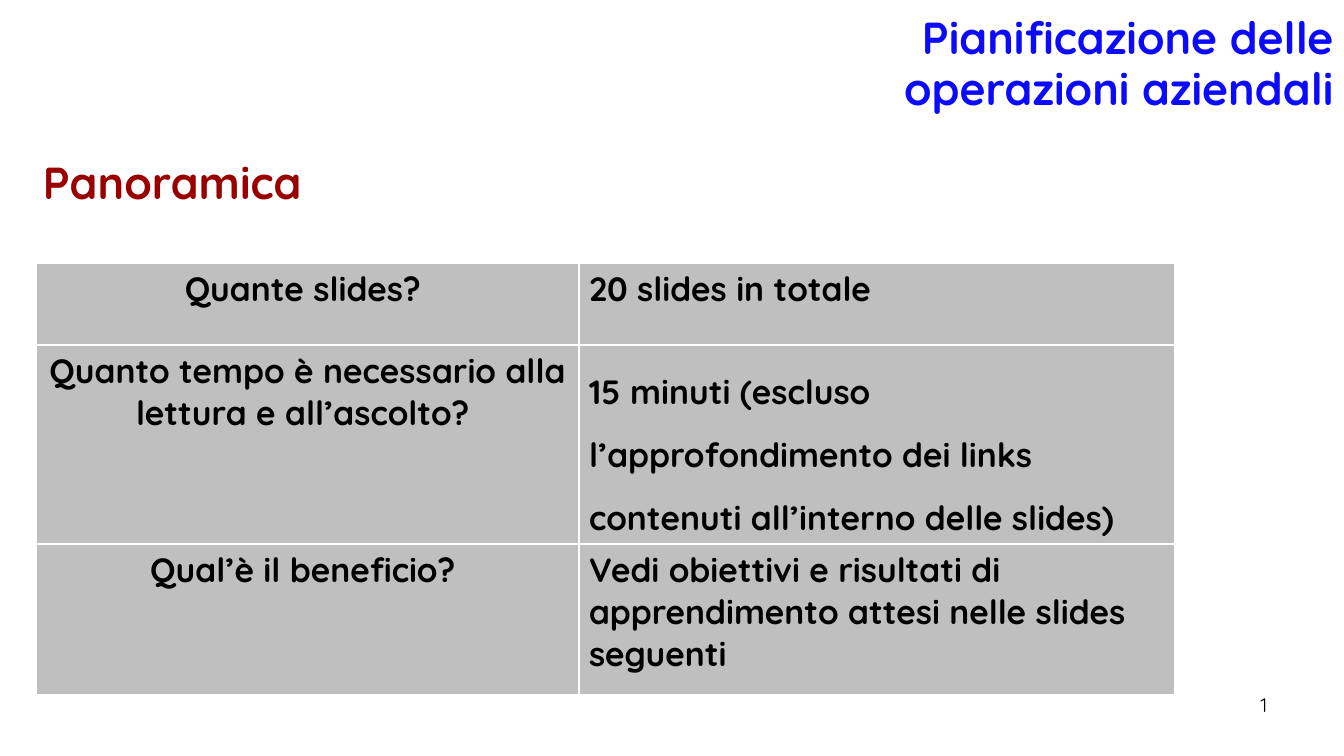
from lxml.etree import SubElement
from pptx import Presentation
from pptx.dml.color import RGBColor
from pptx.enum.text import MSO_ANCHOR, PP_ALIGN
from pptx.oxml import parse_xml
from pptx.oxml.ns import nsdecls, qn
from pptx.util import Pt

EMU_PER_PX = 914400 / 100.8
FONT = "Quicksand"
BLACK, WHITE, GREY = "000000", "FFFFFF", "BFBFBF"
BLUE, RED = "0B0AFD", "990000"


def px(length):
    return round(length * EMU_PER_PX)


def colour(hex_string):
    return RGBColor.from_string(hex_string)


class SlideBuilder:
    def __init__(self, presentation):
        self.slide = presentation.slides.add_slide(presentation.slide_layouts[5])

    def style(self, paragraph, size, ink, bold=True, align=PP_ALIGN.LEFT, spacing=1.0):
        paragraph.alignment = align
        paragraph.line_spacing = spacing
        font = paragraph.font
        font.name, font.size, font.bold = FONT, Pt(size), bold
        font.color.rgb = colour(ink)

    def title(self, text, left, top, width, height):
        heading = self.slide.shapes.title
        heading.left, heading.top = px(left), px(top)
        heading.width, heading.height = px(width), px(height)
        frame = heading.text_frame
        frame.text = text
        frame.word_wrap = True
        frame.vertical_anchor = MSO_ANCHOR.BOTTOM
        self.style(frame.paragraphs[0], 32, BLUE, align=PP_ALIGN.RIGHT, spacing=0.95)

    def text(self, text, left, top, width, height, size, ink, **style):
        box = self.slide.shapes.add_textbox(px(left), px(top), px(width), px(height))
        box.text_frame.word_wrap = True
        paragraph = box.text_frame.paragraphs[0]
        paragraph.text = text
        self.style(paragraph, size, ink, **style)
        return paragraph

    def slide_number(self, number, left, top, width, height):
        paragraph = self.text("", left, top, width, height, 14, BLACK,
                              bold=False, align=PP_ALIGN.RIGHT)
        field = parse_xml(
            f'<a:fld {nsdecls("a")} id="{{B6F15528-21DE-4FAA-801E-634DDDAF4B2B}}" '
            f'type="slidenum"><a:rPr lang="it-IT"/><a:t>{number}</a:t></a:fld>')
        paragraph._p.append(field)

    def borders(self, cell):
        properties = cell._tc.get_or_add_tcPr()
        for side in ("a:lnL", "a:lnR", "a:lnT", "a:lnB"):
            line = SubElement(properties, qn(side), w=str(Pt(1)))
            fill = SubElement(line, qn("a:solidFill"))
            SubElement(fill, qn("a:srgbClr"), val=WHITE)

    def table(self, rows, left, top, widths, heights):
        table = self.slide.shapes.add_table(
            len(heights), len(widths), px(left), px(top),
            px(sum(widths)), px(sum(heights))).table
        for column, width in zip(table.columns, widths):
            column.width = px(width)
        for row, height, (question, answer, spacing) in zip(table.rows, heights, rows):
            row.height = px(height)
            contents = ((question, PP_ALIGN.CENTER, 1.0), (answer, PP_ALIGN.LEFT, spacing))
            for cell, (text, align, line_spacing) in zip(row.cells, contents):
                cell.text = text
                self.borders(cell)
                cell.fill.solid()
                cell.fill.fore_color.rgb = colour(GREY)
                self.style(cell.text_frame.paragraphs[0], 24, BLACK,
                           align=align, spacing=line_spacing)


def main():
    presentation = Presentation()
    presentation.slide_width, presentation.slide_height = px(1344), px(756)
    builder = SlideBuilder(presentation)

    # Headings
    builder.title("Pianificazione delle\voperazioni aziendali", 93, 0, 1251, 121)
    builder.text("Panoramica", 33, 150, 327, 68, 32, RED)

    # Overview: question, answer, line spacing of the answer
    overview = [
        ("Quante slides? ", "20 slides in totale", 1.0),
        ("Quanto tempo è necessario alla lettura e all’ascolto? ",
         "15 minuti (escluso l’approfondimento dei links contenuti "
         "all’interno delle slides)", 1.5),
        ("Qual’è il beneficio? ",
         "Vedi obiettivi e risultati di apprendimento attesi nelle slides seguenti", 1.0),
    ]
    builder.table(overview, 36, 263, (543, 596), (82, 199, 151))

    # Footer
    builder.slide_number(2, 964, 688, 313, 52)

    presentation.save("out.pptx")


if __name__ == "__main__":
    main()
